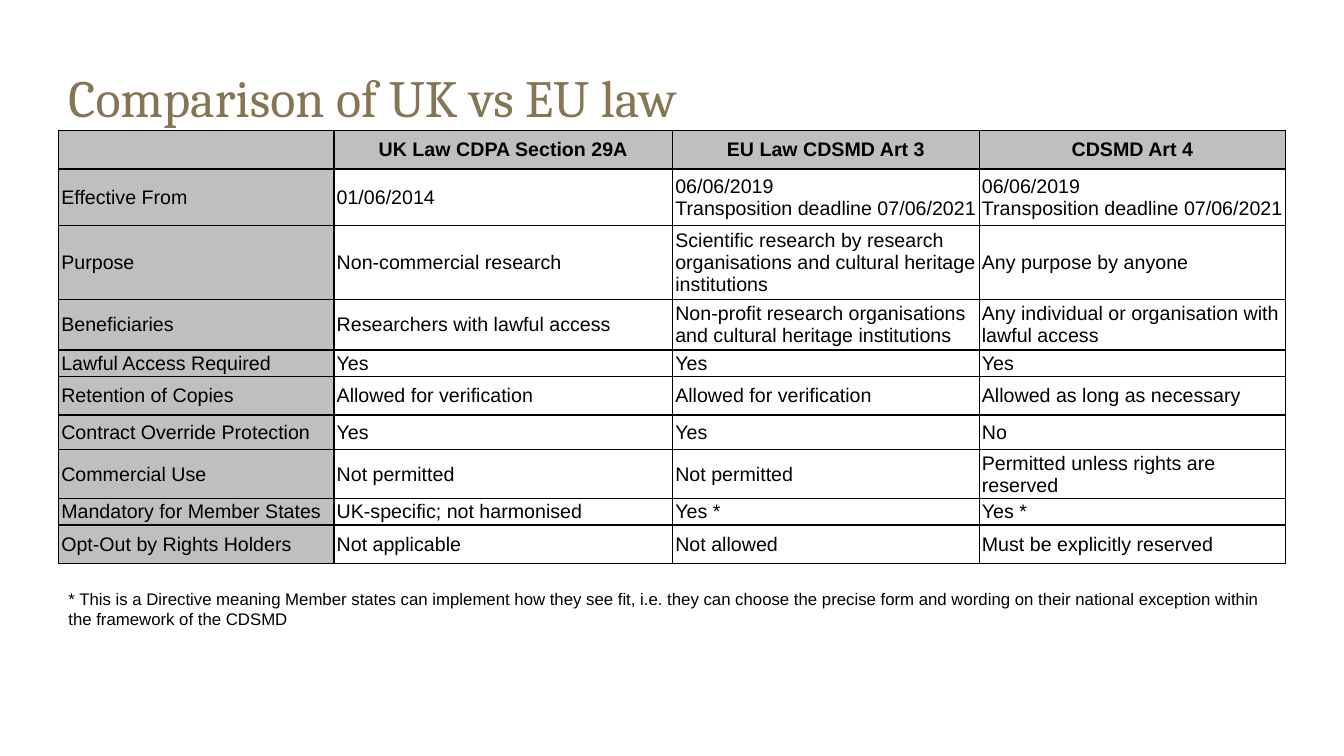
from lxml.etree import SubElement
from pptx import Presentation
from pptx.dml.color import RGBColor
from pptx.enum.text import MSO_ANCHOR, PP_ALIGN
from pptx.oxml.ns import qn
from pptx.util import Pt

COLUMN_WIDTHS = [196.7, 241.9, 219, 219]
ROW_HEIGHTS = [27.5, 40.5, 52.8, 36, 19, 27.5, 24.8, 33.6, 18.8, 27.5]
DIRECTIVE_DATES = "06/06/2019\vTransposition deadline 07/06/2021"
COMPARISON = [
    ["", "UK Law CDPA Section 29A", "EU Law CDSMD Art 3", "CDSMD Art 4"],
    ["Effective From", "01/06/2014", DIRECTIVE_DATES, DIRECTIVE_DATES],
    ["Purpose", "Non-commercial research",
     "Scientific research by research organisations and cultural heritage institutions",
     "Any purpose by anyone"],
    ["Beneficiaries", "Researchers with lawful access",
     "Non-profit research organisations and cultural heritage institutions",
     "Any individual or organisation with lawful access"],
    ["Lawful Access Required", "Yes", "Yes", "Yes"],
    ["Retention of Copies", "Allowed for verification", "Allowed for verification",
     "Allowed as long as necessary"],
    ["Contract Override Protection", "Yes", "Yes", "No"],
    ["Commercial Use", "Not permitted", "Not permitted",
     "Permitted unless rights are reserved"],
    ["Mandatory for Member States", "UK-specific; not harmonised", "Yes *", "Yes *"],
    ["Opt-Out by Rights Holders", "Not applicable", "Not allowed",
     "Must be explicitly reserved"],
]
FOOTNOTE = (
    "* This is a Directive meaning Member states can implement how they see fit, "
    "i.e. they can choose the precise form and wording on their national exception "
    "within the framework of the CDSMD"
)


def color(hex_string):
    return RGBColor.from_string(hex_string)


def format_runs(paragraph, font_name, size, hex_string, bold=False):
    for run in paragraph.runs:
        run.font.name = font_name
        run.font.size = Pt(size)
        run.font.bold = bold
        run.font.color.rgb = color(hex_string)


def add_text(slide, box, text, font_name, size, hex_string):
    shape = slide.shapes.add_textbox(*(Pt(length) for length in box))
    shape.text_frame.word_wrap = True
    shape.text_frame.text = text
    format_runs(shape.text_frame.paragraphs[0], font_name, size, hex_string)


def add_borders(cell, hex_string, width):
    properties = cell._tc.get_or_add_tcPr()
    for side in ("L", "R", "T", "B"):
        line = SubElement(properties, qn(f"a:ln{side}"), w=str(Pt(width)))
        fill = SubElement(line, qn("a:solidFill"))
        SubElement(fill, qn("a:srgbClr"), val=hex_string)


def format_cell(cell, text, is_header, is_shaded):
    cell.margin_left = cell.margin_right = Pt(2)
    cell.margin_top = cell.margin_bottom = Pt(0.7)
    cell.vertical_anchor = MSO_ANCHOR.MIDDLE
    add_borders(cell, "000000", 1)
    if is_shaded:
        cell.fill.solid()
        cell.fill.fore_color.rgb = color("BFBFBF")
    else:
        cell.fill.background()
    paragraph = cell.text_frame.paragraphs[0]
    paragraph.text = text
    paragraph.alignment = PP_ALIGN.CENTER if is_header else PP_ALIGN.LEFT
    format_runs(paragraph, "Arial", 14, "000000", bold=is_header)


def add_comparison_table(slide, left, top):
    table = slide.shapes.add_table(
        len(ROW_HEIGHTS), len(COLUMN_WIDTHS), Pt(left), Pt(top),
        Pt(sum(COLUMN_WIDTHS)), Pt(sum(ROW_HEIGHTS)),
    ).table
    table.first_row = table.horz_banding = False
    for column, width in zip(table.columns, COLUMN_WIDTHS):
        column.width = Pt(width)
    for row_index, (row, height) in enumerate(zip(table.rows, ROW_HEIGHTS)):
        row.height = Pt(height)
        for column_index, text in enumerate(COMPARISON[row_index]):
            is_header = row_index == 0
            format_cell(row.cells[column_index], text, is_header,
                        is_header or column_index == 0)


def main():
    presentation = Presentation()
    presentation.slide_width = Pt(960)
    presentation.slide_height = Pt(540)
    slide = presentation.slides.add_slide(presentation.slide_layouts[6])
    add_text(slide, (41.8, 43.2, 816, 90), "Comparison of UK vs EU law",
             "Cambria", 37.3, "857553")
    add_comparison_table(slide, 41.8, 93.2)
    add_text(slide, (41.8, 417, 884, 36), FOOTNOTE, "Arial", 12, "000000")
    presentation.save("out.pptx")


if __name__ == "__main__":
    main()
